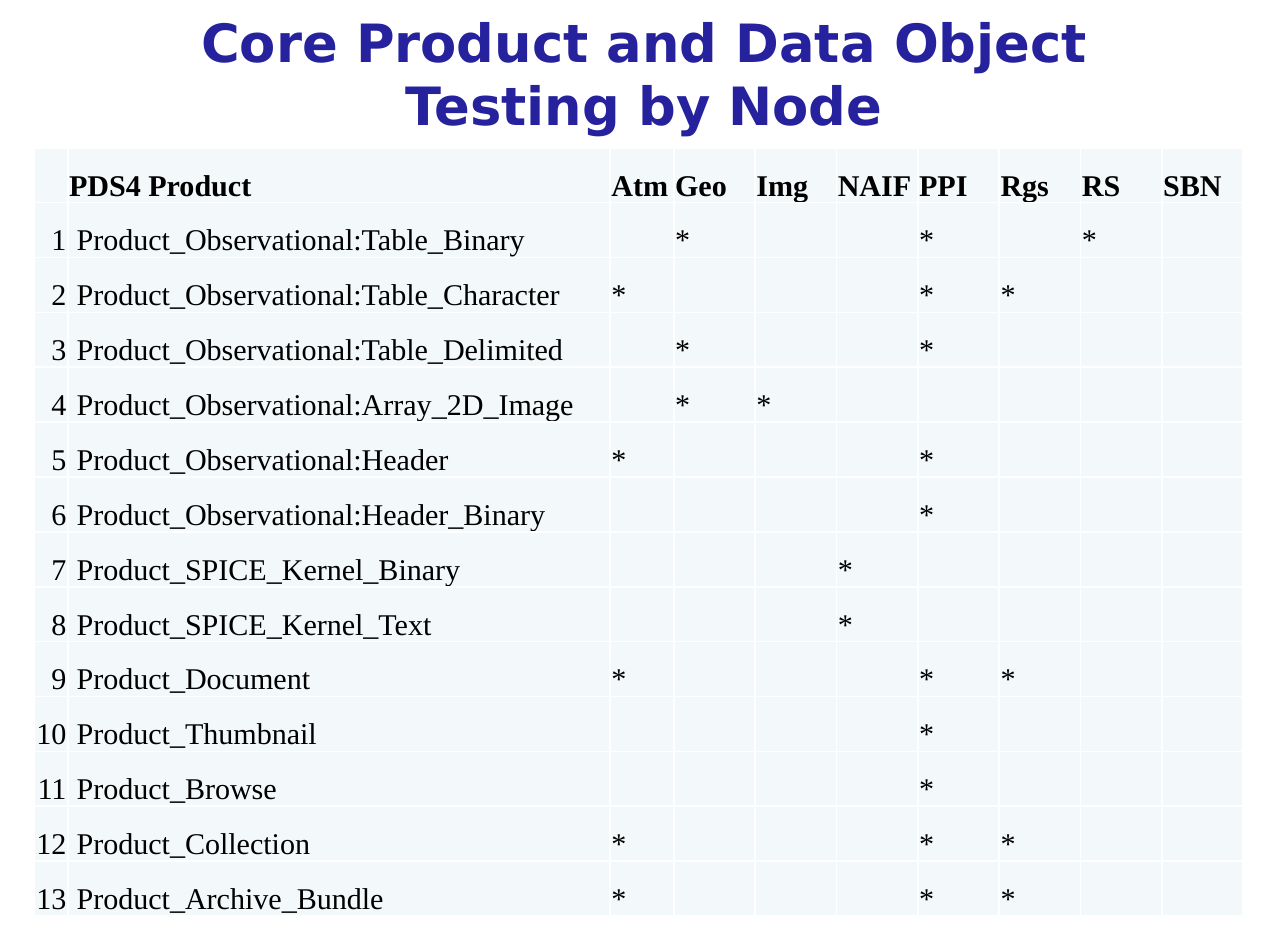
from lxml.etree import SubElement
from pptx import Presentation
from pptx.dml.color import RGBColor
from pptx.enum.text import MSO_ANCHOR, PP_ALIGN
from pptx.oxml.ns import qn
from pptx.util import Inches, Pt

COLORS = {"title": "26229E", "text": "000000", "cell": "F3F9FA", "rule": "FFFFFF"}
TITLE = {"name": "DejaVu Sans", "size": Pt(28), "bold": True}
HEAD = {"name": "Times New Roman", "size": Pt(16), "bold": True}
BODY = {**HEAD, "bold": False}
CELL = {
    "vertical_anchor": MSO_ANCHOR.BOTTOM,
    "margin_left": Inches(0.01),
    "margin_right": Inches(0.01),
    "margin_top": Inches(0.01),
    "margin_bottom": 0,
}

NODES = ["Atm", "Geo", "Img", "NAIF", "PPI", "Rgs", "RS", "SBN"]
# Each product with the nodes that test it
TESTS = [
    ("Product_Observational:Table_Binary", ["Geo", "PPI", "RS"]),
    ("Product_Observational:Table_Character", ["Atm", "PPI", "Rgs"]),
    ("Product_Observational:Table_Delimited", ["Geo", "PPI"]),
    ("Product_Observational:Array_2D_Image", ["Geo", "Img"]),
    ("Product_Observational:Header", ["Atm", "PPI"]),
    ("Product_Observational:Header_Binary", ["PPI"]),
    ("Product_SPICE_Kernel_Binary", ["NAIF"]),
    ("Product_SPICE_Kernel_Text", ["NAIF"]),
    ("Product_Document", ["Atm", "PPI", "Rgs"]),
    ("Product_Thumbnail", ["PPI"]),
    ("Product_Browse", ["PPI"]),
    ("Product_Collection", ["Atm", "PPI", "Rgs"]),
    ("Product_Archive_Bundle", ["Atm", "PPI", "Rgs"]),
]
WIDTHS = [0.25, 4, 0.47] + [0.6] * 7


def set_all(item, values):
    for key, value in values.items():
        setattr(item, key, value)


def add_text(frame, text, style, color, align):
    para = frame.paragraphs[0]
    para.alignment = align
    if text:
        run = para.add_run()
        run.text = text
        set_all(run.font, style)
        run.font.color.rgb = RGBColor.from_string(COLORS[color])


def add_title(slide):
    box = slide.shapes.add_textbox(Inches(0.71), 0, Inches(8.08), Inches(1.08))
    frame = box.text_frame
    set_all(frame, {"word_wrap": True, "vertical_anchor": MSO_ANCHOR.MIDDLE})
    add_text(frame, "Core Product and Data Object Testing by Node",
             TITLE, "title", PP_ALIGN.CENTER)


def add_rules(cell):
    # Borders must come before the fill in the cell properties
    props = cell._tc.get_or_add_tcPr()
    for side in ("a:lnL", "a:lnR", "a:lnT", "a:lnB"):
        line = SubElement(props, qn(side), w=str(Pt(1)))
        fill = SubElement(line, qn("a:solidFill"))
        SubElement(fill, qn("a:srgbClr"), val=COLORS["rule"])


def fill_cell(cell, text, style, align):
    set_all(cell, CELL)
    add_rules(cell)
    cell.fill.solid()
    cell.fill.fore_color.rgb = RGBColor.from_string(COLORS["cell"])
    add_text(cell.text_frame, text, style, "text", align)


def add_grid(slide):
    rows = [["", "PDS4 Product", *NODES]]
    for num, (name, used) in enumerate(TESTS, 1):
        marks = ["*" if node in used else "" for node in NODES]
        rows.append([str(num), " " + name, *marks])

    frame = slide.shapes.add_table(len(rows), len(WIDTHS), Inches(0.25),
                                   Inches(1.09), Inches(8.92), Inches(5.67))
    table = frame.table
    for col, width in zip(table.columns, WIDTHS):
        col.width = Inches(width)
    for r, row in enumerate(rows):
        for c, text in enumerate(row):
            align = PP_ALIGN.RIGHT if c == 0 else PP_ALIGN.LEFT
            fill_cell(table.cell(r, c), text, BODY if r else HEAD, align)


def main():
    deck = Presentation()
    set_all(deck, {"slide_width": Inches(9.5), "slide_height": Inches(7)})
    slide = deck.slides.add_slide(deck.slide_layouts[6])
    add_title(slide)
    add_grid(slide)
    deck.save("out.pptx")


if __name__ == "__main__":
    main()
